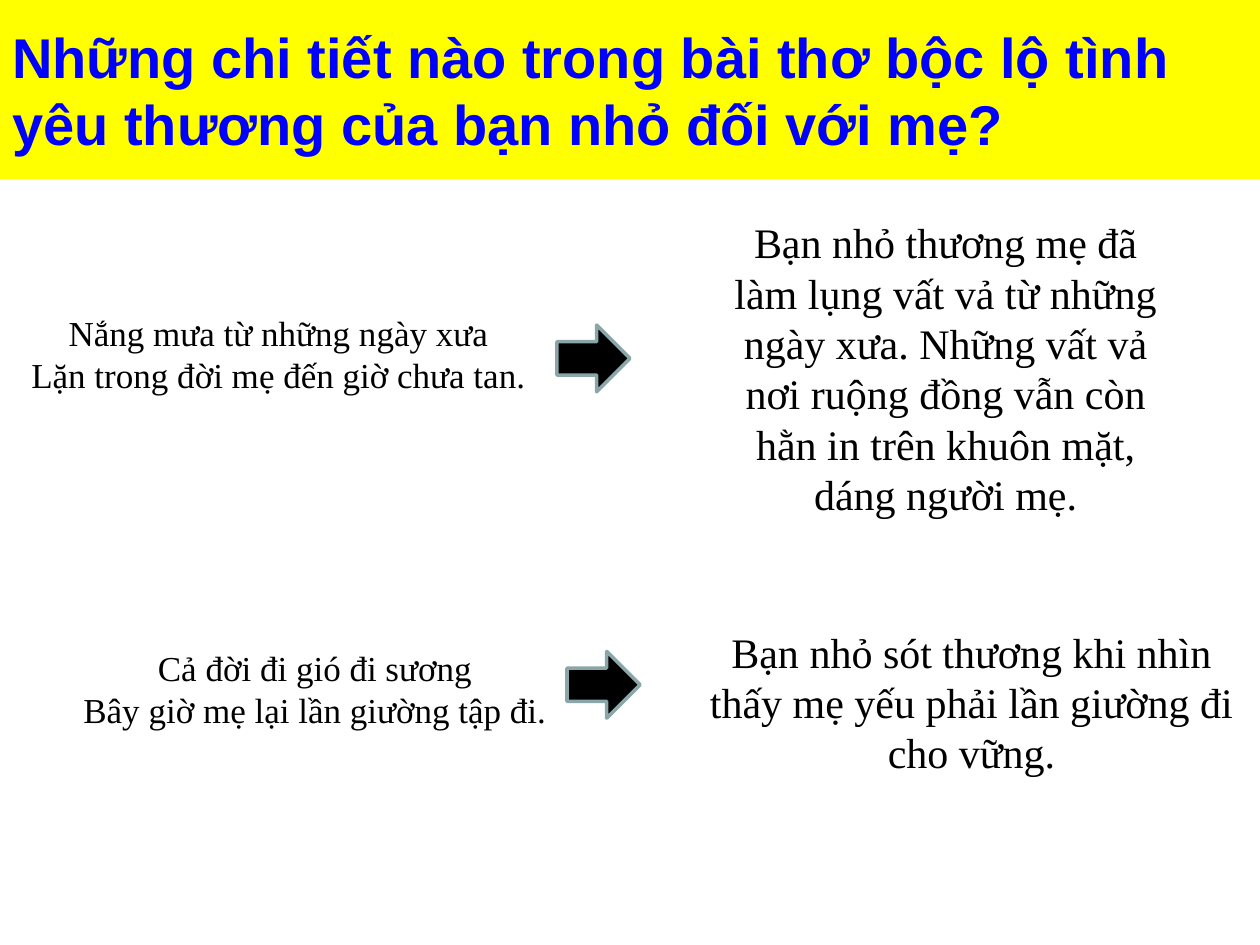
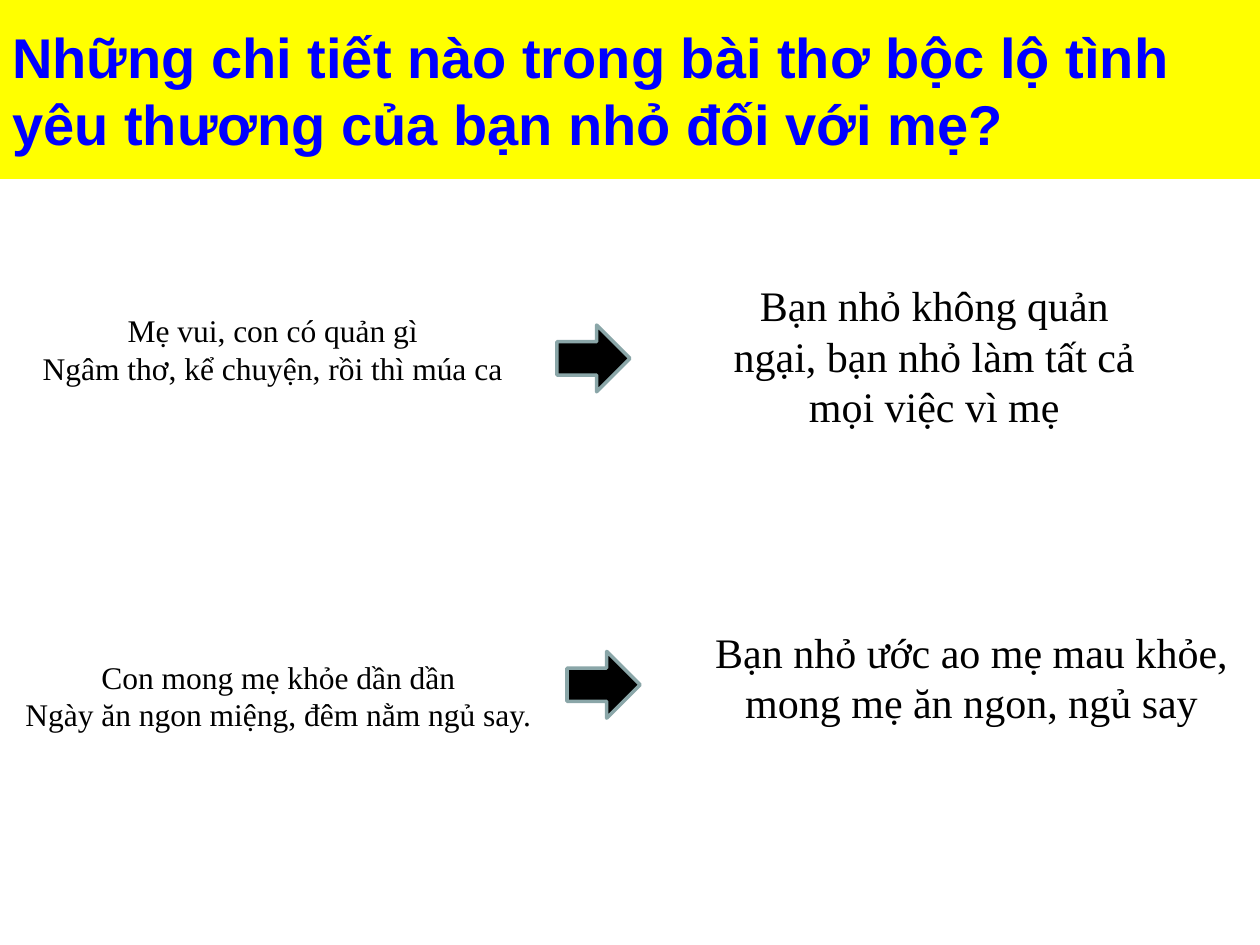
import pptx
import pptx.util
from pptx.dml.color import RGBColor
from pptx.enum.shapes import MSO_SHAPE
from pptx.enum.text import MSO_ANCHOR, PP_ALIGN
from pptx.util import Inches

COLORS = {"band": "FFFF00", "title": "0000FF", "ink": "000000", "arrow_edge": "8AA6A8"}
TITLE_FONT, BODY_FONT = "Arial", "Times New Roman"
MEANING_SIZE = 24

QUESTION = "Những chi tiết nào trong bài thơ bộc lộ tình yêu thương của bạn nhỏ đối với mẹ?"
ARROW_SIZE = (0.58, 0.53)
ARROW_CORNERS = [(4.42, 2.58), (4.5, 5.17)]

# Each text is (lines, (left, top, width, height)); verses share one size per slide.
SLIDES = [
    {
        "verse_size": 20,
        "verses": [
            (["Nắng mưa từ những ngày xưa", "Lặn trong đời mẹ đến giờ chưa tan."],
             (0, 2.42, 4.42, 0.77)),
            (["Cả đời đi gió đi sương", "Bây giờ mẹ lại lần giường tập đi."],
             (0, 5.08, 5, 0.77)),
        ],
        "meanings": [
            (["Bạn nhỏ thương mẹ đã làm lụng vất vả từ những ngày xưa. Những vất vả "
              "nơi ruộng đồng vẫn còn hằn in trên khuôn mặt, dáng người mẹ."],
             (5.67, 1.67, 3.67, 2.52)),
            (["Bạn nhỏ sót thương khi nhìn thấy mẹ yếu phải lần giường đi cho vững."],
             (5.42, 4.92, 4.58, 1.31)),
        ],
    },
    {
        "verse_size": 18,
        "verses": [
            (["Mẹ vui, con có quản gì", "Ngâm thơ, kể chuyện, rồi thì múa ca"],
             (0, 2.42, 4.33, 0.71)),
            (["Con mong mẹ khỏe dần dần", "Ngày ăn ngon miệng, đêm nằm ngủ say."],
             (0, 5.17, 4.42, 0.71)),
        ],
        "meanings": [
            (["Bạn nhỏ không quản ngại, bạn nhỏ làm tất cả mọi việc vì mẹ"],
             (5.58, 2.17, 3.67, 1.31)),
            (["Bạn nhỏ ước ao mẹ mau khỏe, mong mẹ ăn ngon, ngủ say"],
             (5.42, 4.92, 4.58, 0.91)),
        ],
    },
]


def color(name):
    return RGBColor.from_string(COLORS[name])


def inches(values):
    return [Inches(value) for value in values]


def style(paragraph, font_name, size, color_name, align, bold=False):
    paragraph.alignment = align
    font = paragraph.font
    font.name, font.size, font.bold = font_name, pptx.util.Pt(size), bold
    font.color.rgb = color(color_name)


def add_title_band(slide, width):
    band = slide.shapes.add_shape(MSO_SHAPE.RECTANGLE, 0, 0, width, Inches(1.42))
    band.shadow.inherit = False
    band.fill.solid()
    band.fill.fore_color.rgb = color("band")
    band.line.fill.background()
    frame = band.text_frame
    frame.word_wrap = True
    frame.vertical_anchor = MSO_ANCHOR.MIDDLE
    frame.text = QUESTION
    style(frame.paragraphs[0], TITLE_FONT, 32, "title", PP_ALIGN.LEFT, bold=True)


def add_text(slide, lines, place, size):
    frame = slide.shapes.add_textbox(*inches(place)).text_frame
    frame.word_wrap = True
    frame.text = "\n".join(lines)
    for paragraph in frame.paragraphs:
        style(paragraph, BODY_FONT, size, "ink", PP_ALIGN.CENTER)


def add_arrow(slide, corner):
    arrow = slide.shapes.add_shape(MSO_SHAPE.RIGHT_ARROW, *inches(corner + ARROW_SIZE))
    arrow.shadow.inherit = False
    arrow.fill.solid()
    arrow.fill.fore_color.rgb = color("ink")
    arrow.line.color.rgb = color("arrow_edge")
    arrow.line.width = pptx.util.Pt(2)


def main():
    deck = pptx.Presentation()
    deck.slide_width, deck.slide_height = Inches(10), Inches(7.5)
    for page in SLIDES:
        slide = deck.slides.add_slide(deck.slide_layouts[6])
        add_title_band(slide, deck.slide_width)
        for corner in ARROW_CORNERS:
            add_arrow(slide, corner)
        for lines, place in page["verses"]:
            add_text(slide, lines, place, page["verse_size"])
        for lines, place in page["meanings"]:
            add_text(slide, lines, place, MEANING_SIZE)
    deck.save("out.pptx")


if __name__ == "__main__":
    main()
